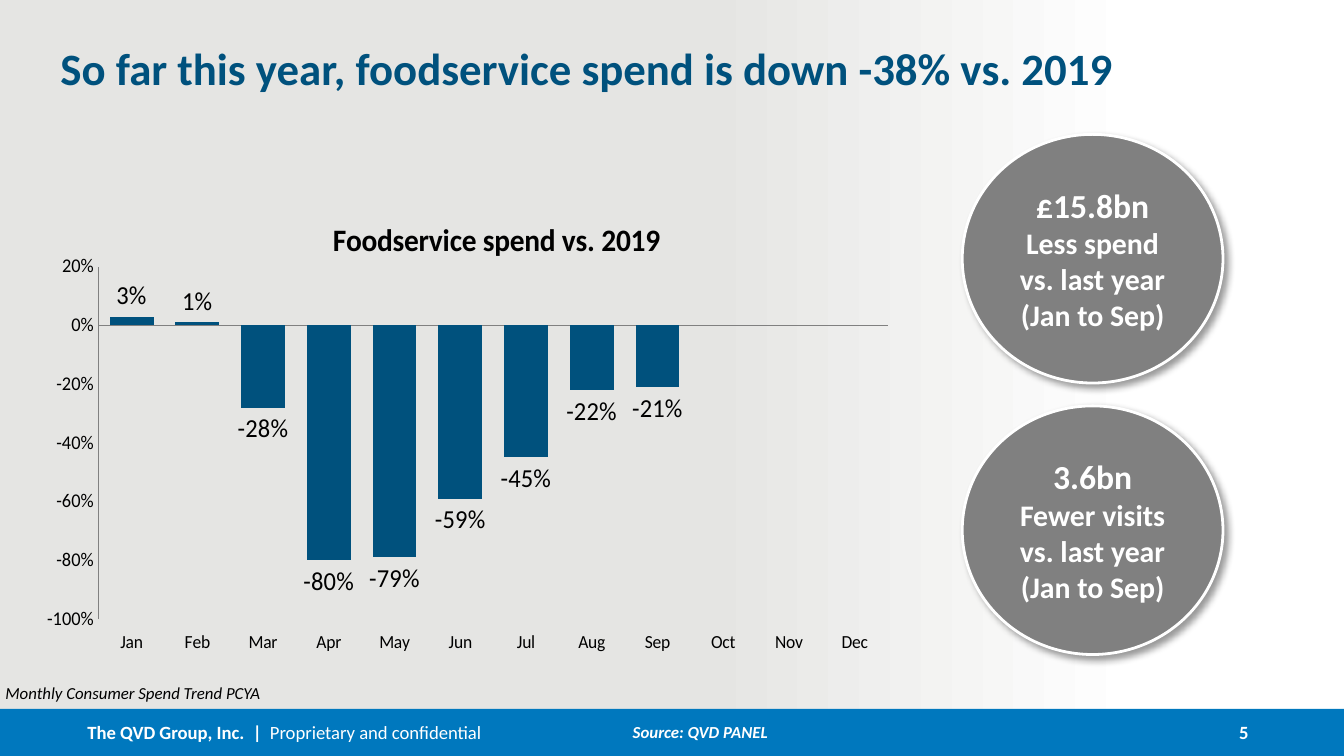
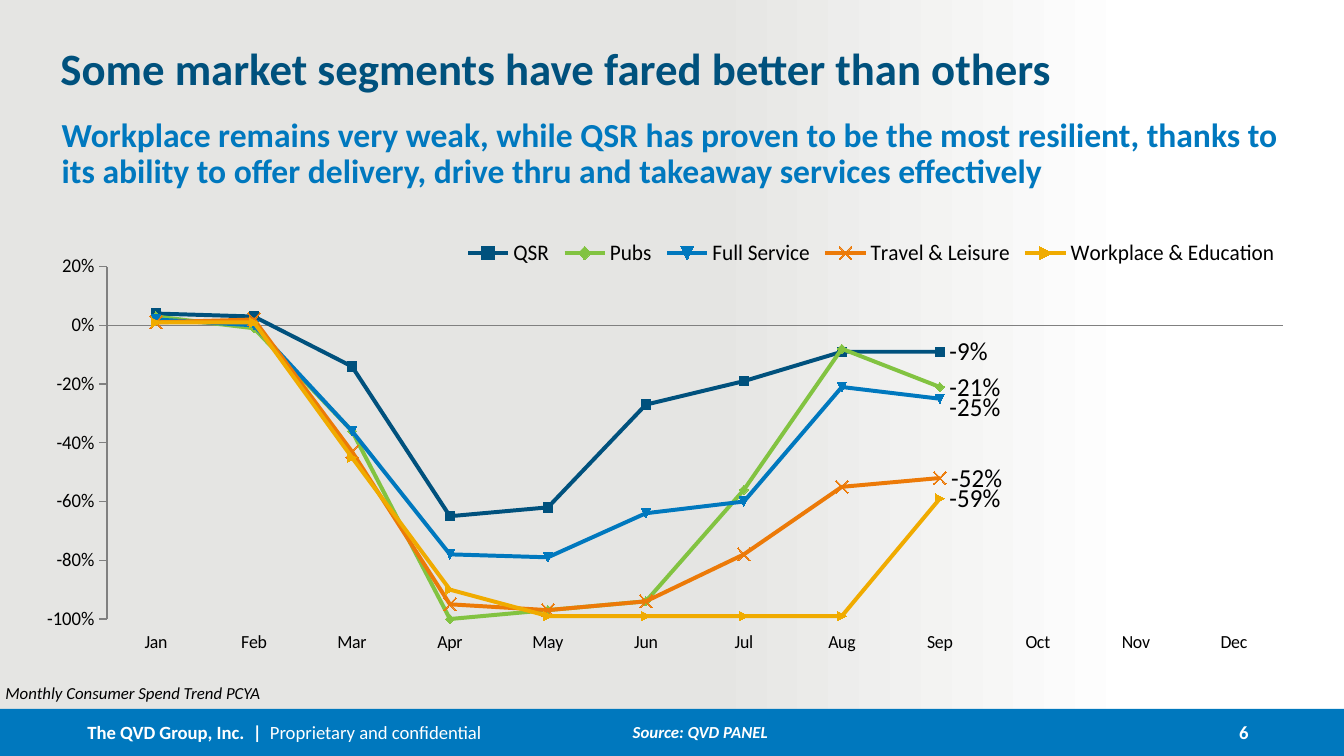
from lxml import etree
from pptx import Presentation
from pptx.chart.data import CategoryChartData
from pptx.dml.color import RGBColor
from pptx.enum.chart import (XL_CHART_TYPE, XL_LABEL_POSITION,
                             XL_LEGEND_POSITION, XL_MARKER_STYLE,
                             XL_TICK_LABEL_POSITION, XL_TICK_MARK)
from pptx.enum.shapes import MSO_SHAPE
from pptx.enum.text import MSO_ANCHOR, PP_ALIGN
from pptx.oxml import parse_xml
from pptx.oxml.ns import nsdecls, qn
from pptx.util import Inches, Pt

BARS, LINES = XL_CHART_TYPE.COLUMN_CLUSTERED, XL_CHART_TYPE.LINE_MARKERS
LOW = XL_TICK_LABEL_POSITION.LOW
NONE, OUT = XL_TICK_MARK.NONE, XL_TICK_MARK.OUTSIDE
ENDS, SIDE = XL_LABEL_POSITION.OUTSIDE_END, XL_LABEL_POSITION.RIGHT
ABOVE = XL_LEGEND_POSITION.TOP
CROSS = XL_MARKER_STYLE.X
RECT, OVAL = MSO_SHAPE.RECTANGLE, MSO_SHAPE.OVAL
TOP, MID, BASE = MSO_ANCHOR.TOP, MSO_ANCHOR.MIDDLE, MSO_ANCHOR.BOTTOM
LEFT, MIDST, RIGHT = PP_ALIGN.LEFT, PP_ALIGN.CENTER, PP_ALIGN.RIGHT

FONT = "Calibri"
WIDE = 10
HIGH = WIDE * 9 / 16
BAND = 0.35
FLAT = (0, 0, 0, 0)
PADS = (0.1, 0.05, 0.1, 0.05)
HUES = {
    "navy": "00517D", "blue": "0078BE", "green": "82C341",
    "orange": "EC7A08", "gold": "F0AB00", "gray": "808080",
    "mist": "E5E5E3", "white": "FFFFFF", "black": "000000",
}
MONTHS = ["Jan", "Feb", "Mar", "Apr", "May", "Jun",
          "Jul", "Aug", "Sep", "Oct", "Nov", "Dec"]
SPEND = [0.03, 0.01, -0.28, -0.8, -0.79, -0.59, -0.45, -0.22, -0.21]
PARTS = [
    ("QSR", "navy",
     [0.04, 0.03, -0.14, -0.65, -0.62, -0.27, -0.19, -0.09, -0.09]),
    ("Pubs", "green",
     [0.03, -0.01, -0.36, -1, -0.97, -0.94, -0.56, -0.08, -0.21]),
    ("Full Service", "blue",
     [0.02, 0, -0.36, -0.78, -0.79, -0.64, -0.6, -0.21, -0.25]),
    ("Travel & Leisure", "orange",
     [0.01, 0.02, -0.43, -0.95, -0.97, -0.94, -0.78, -0.55, -0.52]),
    ("Workplace & Education", "gold",
     [0.01, 0.01, -0.45, -0.9, -0.99, -0.99, -0.99, -0.99, -0.59]),
]


def hue(name):
    """Return the named colour."""
    return RGBColor.from_string(HUES[name])


def place(box):
    """Turn a box in inches into lengths."""
    return [Inches(n) for n in box]


def style(font, size, color="black", bold=False, slant=False):
    """Format a font."""
    font.name, font.size = FONT, Pt(size)
    font.bold, font.italic = bold, slant
    font.color.rgb = hue(color)


def write(shape, paras, size=10, color="white", bold=True, slant=False,
          align=LEFT, anchor=TOP, pads=FLAT, line=None, after=None):
    """Fill a shape with paragraphs of (text, changes) runs."""
    frame = shape.text_frame
    frame.word_wrap, frame.vertical_anchor = True, anchor
    (frame.margin_left, frame.margin_top,
     frame.margin_right, frame.margin_bottom) = place(pads)
    if isinstance(paras, str):
        paras = [[(paras, {})]]
    for i, runs in enumerate(paras):
        para = frame.add_paragraph() if i else frame.paragraphs[0]
        para.alignment = align
        if line:
            para.line_spacing = line
        if after:
            para.space_after = Pt(after)
        for words, diff in runs:
            run = para.add_run()
            run.text = words
            look = {"size": size, "color": color,
                    "bold": bold, "slant": slant}
            style(run.font, **{**look, **diff})


def label(slide, box, paras, **look):
    """Add a text box."""
    write(slide.shapes.add_textbox(*place(box)), paras, **look)


def panel(slide, box, color="blue", kind=RECT):
    """Add a plain shape without line or shadow."""
    shape = slide.shapes.add_shape(kind, *place(box))
    shape.shadow.inherit = False
    shape.fill.solid()
    shape.fill.fore_color.rgb = hue(color)
    shape.line.fill.background()
    return shape


def fade(slide, box):
    """Add the backdrop that fades to white on the right."""
    fill = panel(slide, box).fill
    fill.gradient()
    fill.gradient_angle = 180
    for stop, spot, name in zip(fill.gradient_stops, (0, 0.38),
                                ("white", "mist")):
        stop.position = spot
        stop.color.rgb = hue(name)


def footer(slide, box, page):
    """Add the bottom band with owner, source and page number."""
    x, y, w, h = box
    panel(slide, box)
    label(slide, (x + 0.65, y, 4.11, h),
          [[("The QVD Group, Inc.  |  ", {}),
            ("Proprietary and confidential", {"bold": False})]], anchor=MID)
    label(slide, (x + 3.41, y + 0.07, 3.6, 0.26), "Source: QVD PANEL",
          size=9, slant=True, align=MIDST, pads=PADS, line=0.85, after=14.4)
    label(slide, (x + w - 1.21, y, 0.65, h), str(page), align=RIGHT,
          anchor=MID, pads=(0, 0.05, 0.15, 0.05))


def start(deck, title, page):
    """Add a slide with backdrop, title, note and footer."""
    slide = deck.slides.add_slide(deck.slide_layouts[5])
    head = slide.shapes.title
    fade(slide, (0, 0, 8.46, 5.28))
    slide.shapes._spTree.append(head._element)
    head.left, head.top, head.width, head.height = place(
        (0.45, 0.38, 9.28, 0.5))
    write(head, title, size=24, color="navy", line=0.8, after=2)
    label(slide, (0.04, 4.94, 4.44, 0.29),
          "Monthly Consumer Spend Trend PCYA", size=9, color="black",
          bold=False, slant=True, anchor=BASE, line=0.8)
    footer(slide, (0, HIGH - BAND, WIDE, BAND), page)
    return slide


def layout(node, spot, edge=True, inner=False, **sizes):
    """Give a chart part a manual layout."""
    for old in node.findall(qn("c:layout")):
        node.remove(old)
    root = parse_xml(f"<c:layout {nsdecls('c')}><c:manualLayout/></c:layout>")
    tags = [("layoutTarget", "inner")] if inner else []
    if edge:
        tags += [("xMode", "edge"), ("yMode", "edge")]
    for tag, val in tags + list(sizes.items()):
        etree.SubElement(root[0], qn("c:" + tag)).set("val", str(val))
    node.insert(spot, root)


def graph(slide, box, kind, rows, tick):
    """Add a chart of monthly change with its axes."""
    data = CategoryChartData(number_format="0%")
    data.categories = MONTHS
    for name, _, vals in rows:
        data.add_series(name, vals + [None] * (len(MONTHS) - len(vals)))
    chart = slide.shapes.add_chart(kind, *place(box), data).chart
    style(chart.font, 14)
    chart.has_title = chart.has_legend = False
    cats, vals = chart.category_axis, chart.value_axis
    cats.tick_label_position = LOW
    vals.minimum_scale, vals.maximum_scale, vals.major_unit = -1, 0.2, 0.2
    vals.tick_labels.number_format = "0%"
    vals.tick_labels.number_format_is_linked = False
    for axis, mark, size in ((cats, NONE, 10), (vals, tick, 10.5)):
        axis.has_major_gridlines = False
        axis.major_tick_mark, axis.minor_tick_mark = mark, NONE
        axis.format.line.color.rgb = hue("gray")
        axis.format.line.width = Pt(0.75)
        style(axis.tick_labels.font, size)
    area = chart._chartSpace.chart.plotArea
    layout(area, 0, inner=True, x=0, y=0.15, w=1, h=0.78)
    chart.plots[0].vary_by_categories = False
    return chart


def columns(slide, box):
    """Add the column chart of total spend."""
    name = "Foodservice spend vs. 2019"
    chart = graph(slide, box, BARS, [(name, "navy", SPEND)], NONE)
    frame = chart.chart_title.text_frame
    frame.text = name
    style(frame.paragraphs[0].runs[0].font, 16.8, bold=True)
    chart.chart_title.include_in_layout = False
    layout(chart.chart_title._element, 1, x=0.29, y=0.03)
    plot = chart.plots[0]
    plot.gap_width = 50
    row = plot.series[0]
    row.invert_if_negative = False
    row.format.fill.solid()
    row.format.fill.fore_color.rgb = hue("navy")
    tags = row.data_labels
    tags.show_value, tags.position = True, ENDS
    tags.number_format, tags.number_format_is_linked = "0%", False
    style(tags.font, 14)


def trends(slide, box):
    """Add the line chart of market segments."""
    chart = graph(slide, box, LINES, PARTS, OUT)
    chart.has_legend = True
    chart.legend.position = ABOVE
    chart.legend.include_in_layout = False
    style(chart.legend.font, 12)
    layout(chart.legend._element, 1, x=0.3, y=0.08, w=0.7, h=0.08)
    for row, (name, color, vals) in zip(chart.plots[0].series, PARTS):
        row.smooth = False
        row.format.line.color.rgb = hue(color)
        row.format.line.width = Pt(2.25)
        if name == "Travel & Leisure":
            row.marker.style, row.marker.size = CROSS, 7
            row.marker.format.line.color.rgb = hue(color)
        row.data_labels.show_value = False
        tag = row.points[len(vals) - 1].data_label
        style(tag.font, 14)
        tag.position = SIDE
        if name == "Full Service":
            node = row._element.find(qn("c:dLbls")).find(qn("c:dLbl"))
            layout(node, 1, edge=False, x=0, y=0.02)


def badge(slide, box, figure, words):
    """Add a round badge with a key figure."""
    shape = panel(slide, box, "gray", OVAL)
    shape.line.color.rgb = hue("white")
    shape.line.width = Pt(1.5)
    cast = shape._element.spPr.find(qn("a:effectLst"))
    cast.append(parse_xml(
        f'<a:outerShdw {nsdecls("a")} blurRad="{Pt(4)}" dist="{Pt(3)}" '
        f'dir="2700000" algn="tl" rotWithShape="0">'
        f'<a:srgbClr val="{HUES["black"]}"><a:alpha val="40000"/>'
        f'</a:srgbClr></a:outerShdw>'))
    write(shape, [[(figure, {"size": 18})], [(words, {})],
                  [("(Jan to Sep)", {})]],
          size=16, align=MIDST, anchor=MID, pads=PADS)


def total(deck):
    """Build the slide on total spend."""
    slide = start(
        deck, "So far this year, foodservice spend is down -38% vs. 2019", 5)
    columns(slide, (0.35, 1.48, 6.26, 3.38))
    facts = [("£15.8bn", "Less spend vs. last year"),
             ("3.6bn", "Fewer visits vs. last year")]
    for i, (figure, words) in enumerate(facts):
        badge(slide, (7.16, 1 + 2.02 * i, 1.94, 1.85), figure, words)


def split(deck):
    """Build the slide on market segments."""
    slide = start(
        deck, "Some market segments have fared better than others", 6)
    label(slide, (0.46, 0.88, 9.27, 0.59),
          "Workplace remains very weak, while QSR has proven to be the most "
          "resilient, thanks to its ability to offer delivery, drive thru "
          "and takeaway services effectively",
          size=18, color="blue", line=0.9, after=2)
    trends(slide, (0.35, 1.48, 9.2, 3.38))


def main():
    """Build and save the deck."""
    deck = Presentation()
    deck.slide_width, deck.slide_height = Inches(WIDE), Inches(HIGH)
    total(deck)
    split(deck)
    deck.save("out.pptx")


if __name__ == "__main__":
    main()
